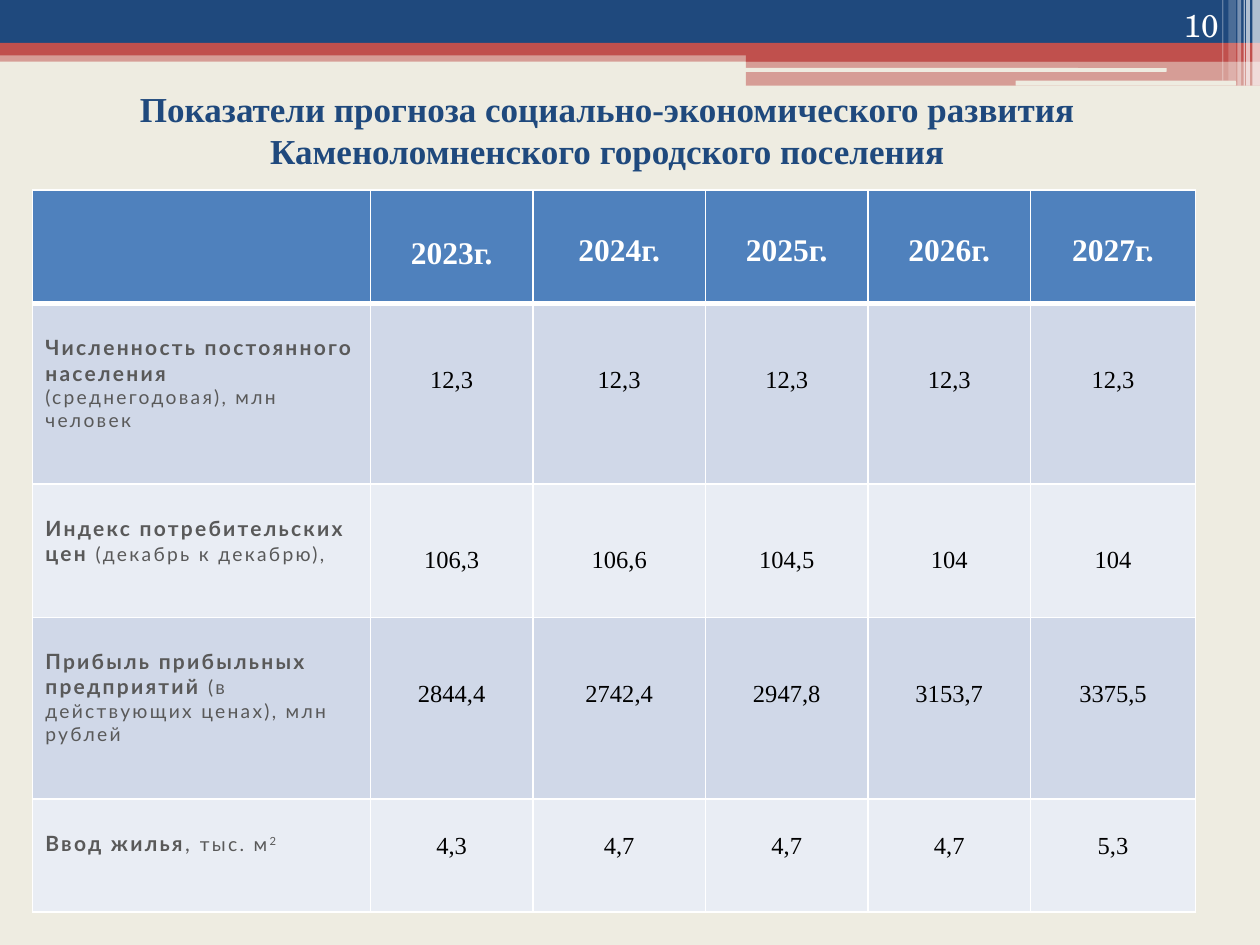
from lxml import etree
from pptx import Presentation
from pptx.dml.color import RGBColor
from pptx.enum.shapes import MSO_SHAPE
from pptx.enum.text import MSO_ANCHOR, PP_ALIGN
from pptx.oxml.ns import qn
from pptx.util import Inches, Pt

RECT, ROUND = MSO_SHAPE.RECTANGLE, MSO_SHAPE.ROUNDED_RECTANGLE
LEFT, CENTER, RIGHT = PP_ALIGN.LEFT, PP_ALIGN.CENTER, PP_ALIGN.RIGHT
TOP, MIDDLE, BOTTOM = MSO_ANCHOR.TOP, MSO_ANCHOR.MIDDLE, MSO_ANCHOR.BOTTOM

NAVY, RED, CREAM, WHITE = "1F497D", "C0504D", "EEECE1", "FFFFFF"
BLUE, GRAY, BLACK = "4F81BD", "595959", "000000"
BANDS = ["D0D8E8", "E9EDF4"]
SERIF, SANS, SCHOOL = "Times New Roman", "Lato", "TeX Gyre Schola"

TITLE = ("Показатели прогноза социально-экономического развития "
         "Каменоломненского городского поселения")
PAGE = "10"
YEARS = ["2023г.", "2024г.", "2025г.", "2026г.", "2027г."]
BOLD, SMALL, SUPER = dict(bold=True), dict(size=11), dict(size=11, base=30)
ROWS = [
    ([("Численность постоянного населения ", BOLD),
      ("(среднегодовая), млн человек", SMALL)],
     ["12,3", "12,3", "12,3", "12,3", "12,3"], 1.43, 0.5),
    ([("Индекс потребительских цен ", BOLD),
      ("(декабрь к декабрю),", SMALL)],
     ["106,3", "106,6", "104,5", "104", "104"], 1.06, 0.5),
    ([("Прибыль прибыльных предприятий ", BOLD),
      ("(в действующих ценах), млн рублей", SMALL)],
     ["2844,4", "2742,4", "2947,8", "3153,7", "3375,5"], 1.44, 0.5),
    ([("Ввод жилья", BOLD), (", ", {}), ("тыс. м", SMALL), ("2", SUPER)],
     ["4,3", "4,7", "4,7", "4,7", "5,3"], 0.9, 0.27),
]
HEAD = 0.9
COLS = [2.68, 1.29, 1.37, 1.29, 1.29, 1.31]

BARS = [
    (RECT, 0, 0.4, 10, 0.09, RED, 50),
    (RECT, 0, 0, 10, 0.34, NAVY, 100),
    (RECT, 0, 0.34, 10, 0.1, RED, 100),
    (RECT, 5.92, 0.39, 4.08, 0.1, RED, 100),
    (RECT, 5.92, 0.48, 4.08, 0.2, RED, 50),
    (ROUND, 5.91, 0.54, 3.35, 0.03, CREAM, 100),
    (ROUND, 8.06, 0.64, 1.75, 0.04, CREAM, 100),
]
STRIPES = [
    (9.94, 0.06, 0.68, 65), (9.89, 0.03, 0.68, 65), (9.87, 0.01, 0.68, 60),
    (9.82, 0.03, 0.68, 40), (9.75, 0.06, 0.64, 20), (9.7, 0.01, 0.64, 30),
]


def color(code):
    return RGBColor.from_string(code)


def paint(fill, code):
    fill.solid()
    fill.fore_color.rgb = color(code)


def write(frame, text, size=14, font=SERIF, ink=BLACK, bold=False,
          align=CENTER, space=0):
    para = frame.paragraphs[0]
    para.alignment = align
    parts = [(text, {})] if isinstance(text, str) else text
    for words, style in parts:
        run = para.add_run()
        run.text = words
        run.font.name = font
        run.font.size = Pt(style.get("size", size))
        run.font.bold = style.get("bold", bold)
        run.font.color.rgb = color(ink)
        props = run._r.get_or_add_rPr()
        if space:
            props.set("spc", str(int(space * 100)))
        if "base" in style:
            props.set("baseline", str(style["base"] * 1000))


def label(slide, box, text, anchor, **style):
    frame = slide.shapes.add_textbox(*map(Inches, box)).text_frame
    frame.word_wrap = True
    frame.vertical_anchor = anchor
    write(frame, text, **style)


def bar(slide, kind, x, y, w, h, code, alpha):
    shape = slide.shapes.add_shape(kind, *map(Inches, (x, y, w, h)))
    shape.shadow.inherit = False
    shape.line.fill.background()
    paint(shape.fill, code)
    if alpha < 100:
        tone = shape.fill._xPr.find(".//" + qn("a:srgbClr"))
        etree.SubElement(tone, qn("a:alpha")).set("val", str(alpha * 1000))


def edge(cell, **widths):
    props = cell._tc.get_or_add_tcPr()
    for side in "LRTB":
        line = etree.SubElement(props, qn("a:ln" + side))
        line.set("w", str(Pt(widths.get(side, 1))))
        fill = etree.SubElement(line, qn("a:solidFill"))
        etree.SubElement(fill, qn("a:srgbClr")).set("val", WHITE)


def fit(cell, code, top, **widths):
    edge(cell, **widths)
    paint(cell.fill, code)
    cell.vertical_anchor = TOP
    cell.margin_top = Inches(top)


def grid(slide):
    highs = [HEAD] + [row[2] for row in ROWS]
    box = (0.26, 1.51, sum(COLS), sum(highs))
    table = slide.shapes.add_table(
        len(highs), len(COLS), *map(Inches, box)).table
    for col, wide in zip(table.columns, COLS):
        col.width = Inches(wide)
    for row, high in zip(table.rows, highs):
        row.height = Inches(high)

    for c, year in enumerate([""] + YEARS):
        cell = table.cell(0, c)
        fit(cell, BLUE, 0.37 if c == 1 else 0.34, B=3)
        if year:
            write(cell.text_frame, year, size=18, ink=WHITE, bold=True)
    for r, (name, values, high, top) in enumerate(ROWS, 1):
        for c, text in enumerate([name] + values):
            cell = table.cell(r, c)
            fit(cell, BANDS[(r - 1) % 2], top if c else 0.25,
                T=3 if r == 1 else 1)
            style = {} if c else dict(size=12, font=SANS, ink=GRAY,
                                      align=LEFT, space=1.3)
            write(cell.text_frame, text, **style)


def main():
    deck = Presentation()
    deck.slide_width, deck.slide_height = Inches(10), Inches(7.5)
    slide = deck.slides.add_slide(deck.slide_layouts[6])
    paint(slide.background.fill, CREAM)
    for item in BARS:
        bar(slide, *item)
    for x, w, h, alpha in STRIPES:
        bar(slide, RECT, x, 0, w, h, WHITE, alpha)
    label(slide, (0.14, 0.56, 9.36, 0.94), TITLE, MIDDLE,
          size=20, ink=NAVY, bold=True)
    grid(slide)
    label(slide, (8.94, 0, 0.83, 0.4), PAGE, BOTTOM,
          size=18, font=SCHOOL, ink=WHITE, align=RIGHT)
    deck.save("out.pptx")


if __name__ == "__main__":
    main()
